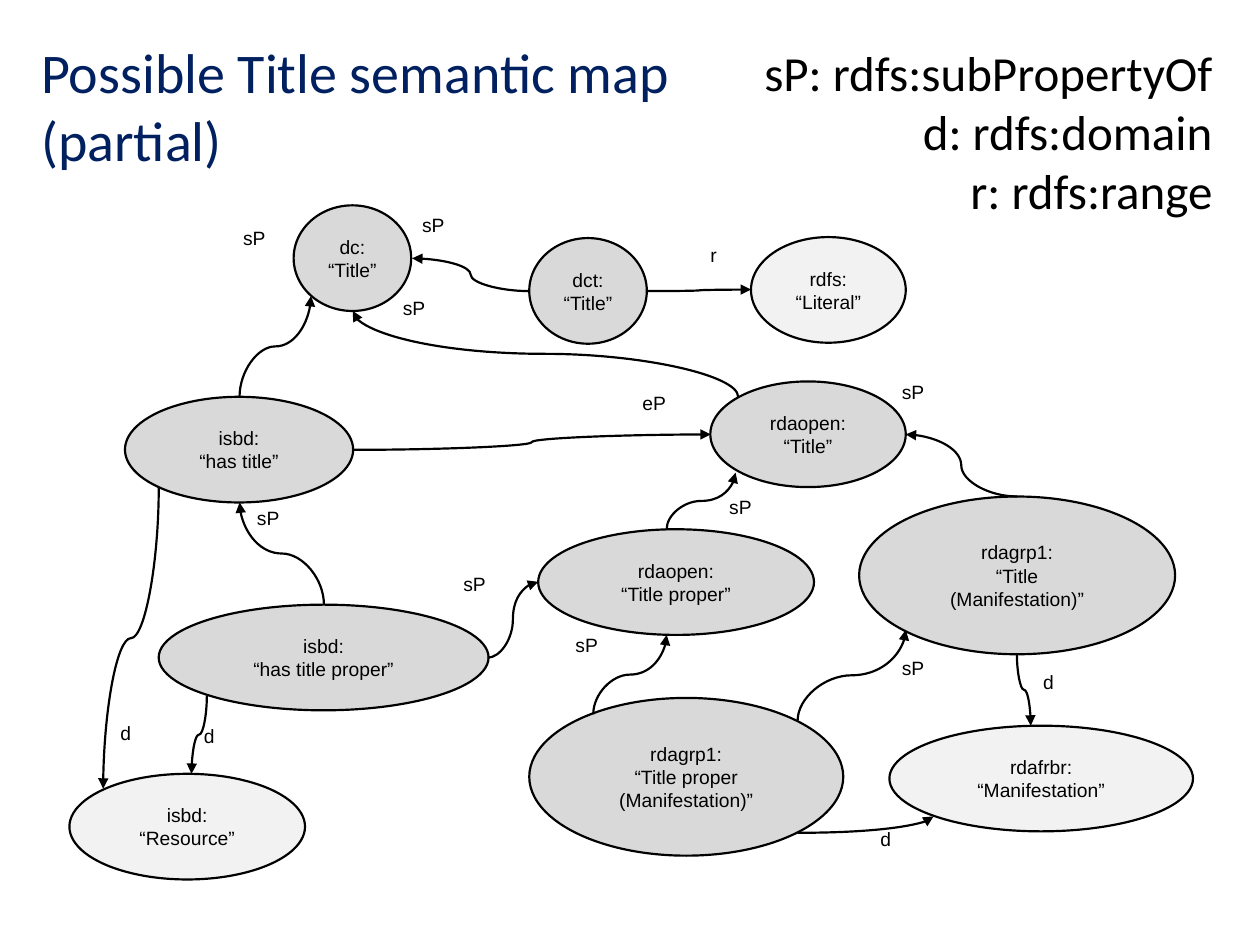
import pptx
import pptx.dml.color
import pptx.enum.shapes
import pptx.enum.text
import pptx.oxml.ns
import pptx.util
from lxml import etree
from pptx.util import Cm

BLACK = pptx.dml.color.RGBColor(0x00, 0x00, 0x00)
NAVY = pptx.dml.color.RGBColor(0x00, 0x20, 0x60)
PROPERTY_GREY = pptx.dml.color.RGBColor(0xD9, 0xD9, 0xD9)
CLASS_GREY = pptx.dml.color.RGBColor(0xF2, 0xF2, 0xF2)
LEFT = pptx.enum.text.PP_ALIGN.LEFT
CENTER = pptx.enum.text.PP_ALIGN.CENTER
RIGHT = pptx.enum.text.PP_ALIGN.RIGHT
LINE_WIDTH = pptx.util.Pt(1.25)


def write_text(shape, text, font_name, size, color, alignment):
    shape.text_frame.text = text
    shape.text_frame.word_wrap = False
    for paragraph in shape.text_frame.paragraphs:
        paragraph.alignment = alignment
        for run in paragraph.runs:
            run.font.name = font_name
            run.font.size = pptx.util.Pt(size)
            run.font.color.rgb = color


def add_arrow(shapes, x1, y1, x2, y2, route):
    width, height = x2 - x1, y2 - y1
    begin, end = (x1, y1), (x2, y2)
    if route == "vertical":
        # A curve that leaves vertically is a horizontal one turned by a quarter
        middle_x, middle_y = (x1 + x2) / 2, (y1 + y2) / 2
        half_x = abs(height) / 2 * (1 if width > 0 else -1)
        half_y = abs(width) / 2 * (1 if height < 0 else -1)
        begin = (middle_x + half_x, middle_y + half_y)
        end = (middle_x - half_x, middle_y - half_y)
    connector = shapes.add_connector(
        pptx.enum.shapes.MSO_CONNECTOR.CURVE,
        Cm(begin[0]), Cm(begin[1]), Cm(end[0]), Cm(end[1]))
    connector.line.color.rgb = BLACK
    connector.line.width = LINE_WIDTH
    properties = connector._element.spPr
    if route == "vertical":
        quarter_turns = 1 if width * height < 0 else 3
        transform = properties.find(pptx.oxml.ns.qn("a:xfrm"))
        transform.set("rot", str(quarter_turns * 90 * 60000))
    if route == "corner":
        geometry = properties.find(pptx.oxml.ns.qn("a:prstGeom"))
        geometry.set("prst", "curvedConnector2")
    line = properties.find(pptx.oxml.ns.qn("a:ln"))
    etree.SubElement(line, pptx.oxml.ns.qn("a:tailEnd"), type="triangle")
    etree.SubElement(properties, pptx.oxml.ns.qn("a:effectLst"))


presentation = pptx.Presentation()
presentation.slide_width = Cm(25.4)
presentation.slide_height = Cm(19.05)
slide = presentation.slides.add_slide(presentation.slide_layouts[6])

# Properties and classes: text, left, top, width, height, fill
nodes = [
    ("dct:\n“Title”", 10.67, 4.8, 2.37, 2.13, PROPERTY_GREY),
    ("dc:\n“Title”", 5.92, 4.14, 2.37, 2.13, PROPERTY_GREY),
    ("rdfs:\n“Literal”", 15.14, 4.78, 3.12, 2.13, CLASS_GREY),
    ("rdagrp1:\n“Title proper\n(Manifestation)”", 10.67, 14.07, 6.33, 3.18, PROPERTY_GREY),
    ("rdafrbr:\n“Manifestation”", 17.93, 14.63, 6.12, 2.13, CLASS_GREY),
    ("rdaopen:\n“Title proper”", 10.85, 10.67, 5.56, 2.13, PROPERTY_GREY),
    ("rdaopen:\n“Title”", 14.32, 7.69, 3.94, 2.13, PROPERTY_GREY),
    ("rdagrp1:\n“Title\n(Manifestation)”", 17.32, 10.01, 6.37, 3.18, PROPERTY_GREY),
    ("isbd:\n“has title proper”", 3.2, 12.19, 6.65, 2.13, PROPERTY_GREY),
    ("isbd:\n“has title”", 2.52, 8, 4.6, 2.13, PROPERTY_GREY),
    ("isbd:\n“Resource”", 1.4, 15.6, 4.75, 2.13, CLASS_GREY),
]
for text, left, top, width, height, fill in nodes:
    ellipse = slide.shapes.add_shape(
        pptx.enum.shapes.MSO_SHAPE.OVAL, Cm(left), Cm(top), Cm(width), Cm(height))
    ellipse.shadow.inherit = False
    ellipse.fill.solid()
    ellipse.fill.fore_color.rgb = fill
    ellipse.line.color.rgb = BLACK
    ellipse.line.width = LINE_WIDTH
    frame = ellipse.text_frame
    frame.margin_left = frame.margin_right = frame.margin_top = frame.margin_bottom = 0
    frame.vertical_anchor = pptx.enum.text.MSO_ANCHOR.MIDDLE
    write_text(ellipse, text, "Arial", 11, BLACK, CENTER)

# Relations: start, end, and the direction in which the curve leaves
arrows = [
    (4.83, 8, 6.27, 5.97, "vertical"),
    (10.67, 5.87, 8.31, 5.21, "horizontal"),
    (13.06, 5.87, 15.14, 5.84, "horizontal"),
    (14.88, 8, 7.11, 6.27, "vertical"),
    (16.08, 16.79, 18.82, 16.46, "corner"),
    (11.96, 14.4, 13.44, 12.8, "vertical"),
    (13.44, 10.67, 14.83, 9.53, "vertical"),
    (20.5, 10.01, 18.26, 8.76, "horizontal"),
    (16.08, 14.53, 18.26, 12.7, "vertical"),
    (20.5, 13.18, 20.78, 14.63, "vertical"),
    (6.53, 12.19, 4.83, 10.13, "vertical"),
    (4.17, 14.02, 3.86, 15.6, "vertical"),
    (3.2, 9.83, 2.08, 15.9, "vertical"),
    (7.11, 9.07, 14.33, 8.76, "horizontal"),
    (9.83, 13.26, 10.85, 11.73, "horizontal"),
]
for arrow in arrows:
    add_arrow(slide.shapes, *arrow)

# Relation labels: text, left, top
labels = [
    ("sP", 8.26, 4.11), ("sP", 7.87, 5.77), ("sP", 4.65, 4.37), ("r", 14.07, 4.72),
    ("d", 17.5, 16.48), ("d", 20.78, 13.31), ("sP", 17.93, 13.03), ("sP", 11.35, 12.57),
    ("sP", 14.45, 9.8), ("sP", 17.93, 7.47), ("d", 3.86, 14.4), ("d", 2.18, 14.35),
    ("sP", 4.93, 10.01), ("sP", 9.09, 11.35), ("eP", 12.7, 7.7),
]
label_widths = {"sP": 1.57, "eP": 1.63, "d": 1.19, "r": 1.07}
for text, left, top in labels:
    label = slide.shapes.add_textbox(Cm(left), Cm(top), Cm(label_widths[text]), Cm(1.37))
    write_text(label, text, "Arial", 11, BLACK, LEFT)
    label.text_frame.paragraphs[0].line_spacing = 1.15
    label.text_frame.paragraphs[0].space_after = pptx.util.Pt(10)

# Title and legend
title = slide.shapes.add_textbox(Cm(0.58), Cm(0.64), Cm(13.31), Cm(3))
write_text(title, "Possible Title semantic map\n(partial)", "Calibri", 32, NAVY, LEFT)
legend = slide.shapes.add_textbox(Cm(15.04), Cm(0.74), Cm(9.65), Cm(3.84))
write_text(legend, "sP: rdfs:subPropertyOf\nd: rdfs:domain\nr: rdfs:range",
           "Calibri", 28, BLACK, RIGHT)

presentation.save("out.pptx")
